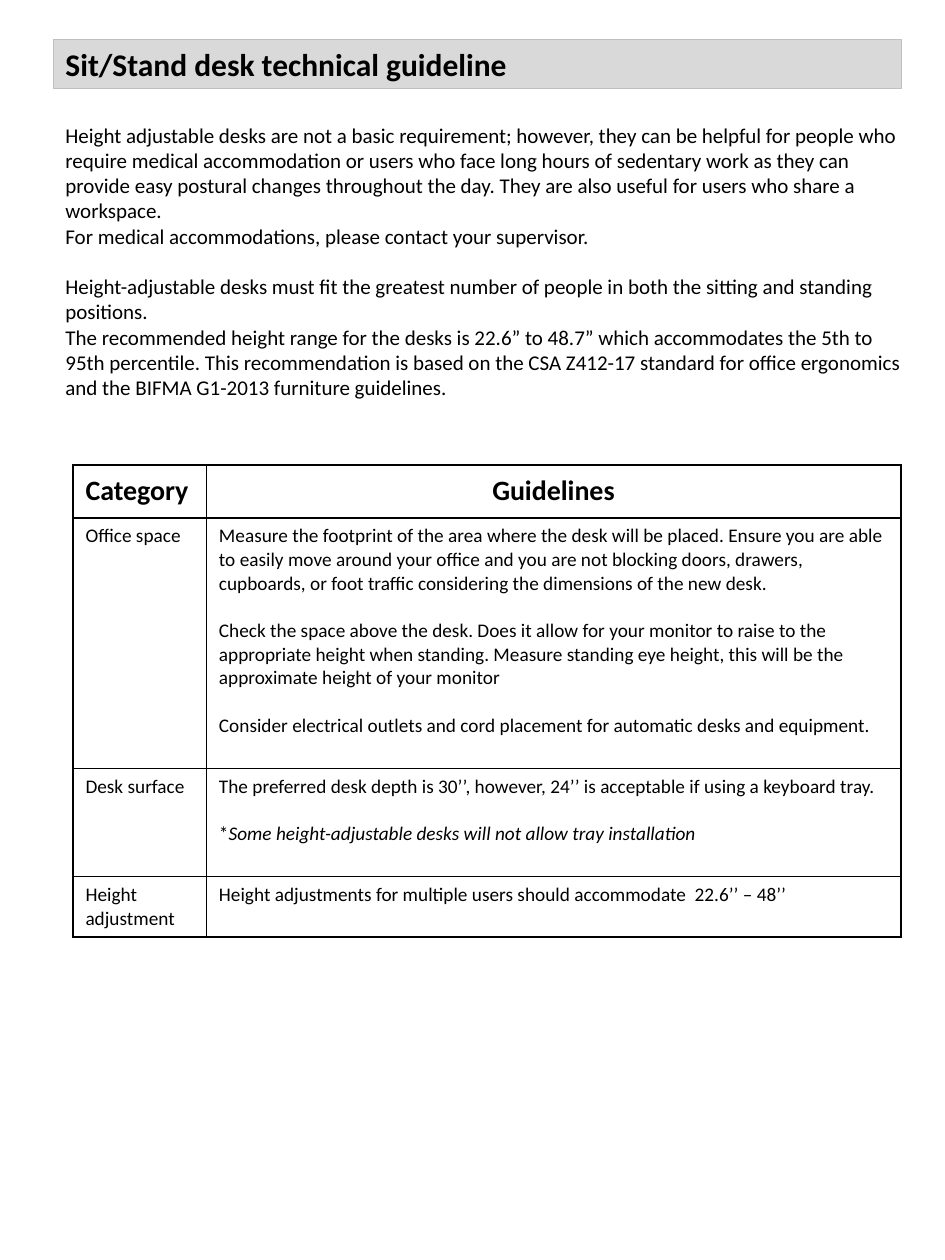
import pptx
import pptx.dml.color
import pptx.enum.shapes
import pptx.enum.text
import pptx.oxml
import pptx.oxml.ns
import pptx.util

Cm = pptx.util.Cm
Pt = pptx.util.Pt
RGBColor = pptx.dml.color.RGBColor
PP_ALIGN = pptx.enum.text.PP_ALIGN
MSO_ANCHOR = pptx.enum.text.MSO_ANCHOR

BLACK = RGBColor(0x00, 0x00, 0x00)
LIGHT_GREY = RGBColor(0xD9, 0xD9, 0xD9)
MID_GREY = RGBColor(0xBF, 0xBF, 0xBF)

FONT = "Calibri"
TITLE = {"size": Pt(18), "bold": True}
BODY = {"size": Pt(12)}
HEADING = {"size": Pt(16), "bold": True}
CELL = {"size": Pt(11), "bold": False}
BODY_GAP = Pt(14.6)
CELL_GAP = Pt(13.4)


class SlideBuilder:
    """Holds the style and the current slide."""

    def __init__(self, presentation):
        self.slide = presentation.slides.add_slide(presentation.slide_layouts[6])
        self.base_format = {"name": FONT, "bold": False, "italic": False}

    def add_text(self, frame, paragraphs, text_format, align=PP_ALIGN.LEFT):
        """Each paragraph is (space before, run, ...); a run is (text, extra format)."""
        for index, (space_before, *runs) in enumerate(paragraphs):
            paragraph = frame.add_paragraph() if index else frame.paragraphs[0]
            paragraph.alignment = align
            paragraph.space_before = space_before
            for text, extra in runs:
                run = paragraph.add_run()
                run.text = text
                for name, value in {**self.base_format, **text_format, **extra}.items():
                    setattr(run.font, name, value)
                run.font.color.rgb = BLACK

    def rectangle(self, left, top, width, height, fill, line):
        shape = self.slide.shapes.add_shape(
            pptx.enum.shapes.MSO_SHAPE.RECTANGLE, left, top, width, height)
        shape.shadow.inherit = False
        shape.fill.solid()
        shape.fill.fore_color.rgb = fill
        shape.line.color.rgb = line
        shape.line.width = Pt(0.5)

    def text_box(self, left, top, width, height, paragraphs, text_format):
        frame = self.slide.shapes.add_textbox(left, top, width, height).text_frame
        frame.word_wrap = True
        frame.auto_size = pptx.enum.text.MSO_AUTO_SIZE.SHAPE_TO_FIT_TEXT
        self.add_text(frame, paragraphs, text_format)

    def border(self, cell):
        properties = cell._tc.get_or_add_tcPr()
        for index, side in enumerate(("lnL", "lnR", "lnT", "lnB")):
            properties.insert(index, pptx.oxml.parse_xml(
                f'<a:{side} {pptx.oxml.ns.nsdecls("a")} w="{Pt(1)}">'
                f'<a:solidFill><a:srgbClr val="{BLACK}"/></a:solidFill></a:{side}>'))

    def table(self, left, top, widths, heights, rows):
        table = self.slide.shapes.add_table(
            len(heights), len(widths), left, top, sum(widths), sum(heights)).table
        for column, width in zip(table.columns, widths):
            column.width = width
        for row_index, (height, contents) in enumerate(zip(heights, rows)):
            table.rows[row_index].height = height
            is_header = row_index == 0
            for column_index, paragraphs in enumerate(contents):
                cell = table.cell(row_index, column_index)
                cell.fill.background()
                self.border(cell)
                cell.vertical_anchor = MSO_ANCHOR.MIDDLE if is_header else MSO_ANCHOR.TOP
                centred = is_header and column_index == 1
                self.add_text(cell.text_frame, paragraphs,
                              HEADING if is_header else CELL,
                              PP_ALIGN.CENTER if centred else PP_ALIGN.LEFT)


def plain(*texts, gap=Pt(0)):
    """Paragraphs of one run each, with the same gap between them."""
    return [(gap if index else Pt(0), (text, {})) for index, text in enumerate(texts)]


INTRODUCTION = plain(
    "Height adjustable desks are not a basic requirement; however, they can be helpful "
    "for people who require medical accommodation or users who face long hours of "
    "sedentary work as they can provide easy postural changes throughout the day. They "
    "are also useful for users who share a workspace.",
    "For medical accommodations, please contact your supervisor.")
HEIGHT_RANGE = [
    (BODY_GAP, ("Height-adjustable desks must fit the greatest number of people in both "
                "the sitting and standing positions.", {})),
    *plain("The recommended height range for the desks is 22.6” to 48.7” which "
           "accommodates the 5th to 95th percentile. This recommendation is based on the "
           "CSA Z412-17 standard for office ergonomics and the BIFMA G1-2013 furniture "
           "guidelines."),
]

GUIDELINES = [
    (plain("Category"), plain("Guidelines")),
    (plain("Office space"), plain(
        "Measure the footprint of the area where the desk will be placed. Ensure you are "
        "able to easily move around your office and you are not blocking doors, drawers, "
        "cupboards, or foot traffic considering the dimensions of the new desk.",
        "Check the space above the desk. Does it allow for your monitor to raise to the "
        "appropriate height when standing. Measure standing eye height, this will be the "
        "approximate height of your monitor",
        "Consider electrical outlets and cord placement for automatic desks and equipment.",
        gap=CELL_GAP)),
    (plain("Desk surface"), [
        *plain("The preferred desk depth is 30’’, however, 24’’ is acceptable if using a "
               "keyboard tray."),
        (CELL_GAP, ("*", {}),
         ("Some height-adjustable desks will not allow tray installation",
          {"italic": True})),
    ]),
    (plain("Height adjustment"),
     plain("Height adjustments for multiple users should accommodate  22.6’’ – 48’’")),
]


def main():
    presentation = pptx.Presentation()
    presentation.slide_width = Cm(19.05)
    presentation.slide_height = Cm(25.4)
    builder = SlideBuilder(presentation)
    margin = Cm(1.07)

    # Title bar
    builder.rectangle(margin, Cm(0.79), Cm(17.1), Cm(0.99), LIGHT_GREY, MID_GREY)
    builder.text_box(margin, Cm(0.79), Cm(13.72), Cm(1.02),
                     plain("Sit/Stand desk technical guideline"), TITLE)

    # Guidelines table
    builder.table(Cm(1.47), Cm(9.37), [Cm(2.69), Cm(14)],
                  [Cm(1.07), Cm(5.05), Cm(2.18), Cm(1.22)], GUIDELINES)

    # Introduction
    builder.text_box(margin, Cm(2.34), Cm(17.48), Cm(5.89),
                     INTRODUCTION + HEIGHT_RANGE, BODY)

    presentation.save("out.pptx")


if __name__ == "__main__":
    main()
